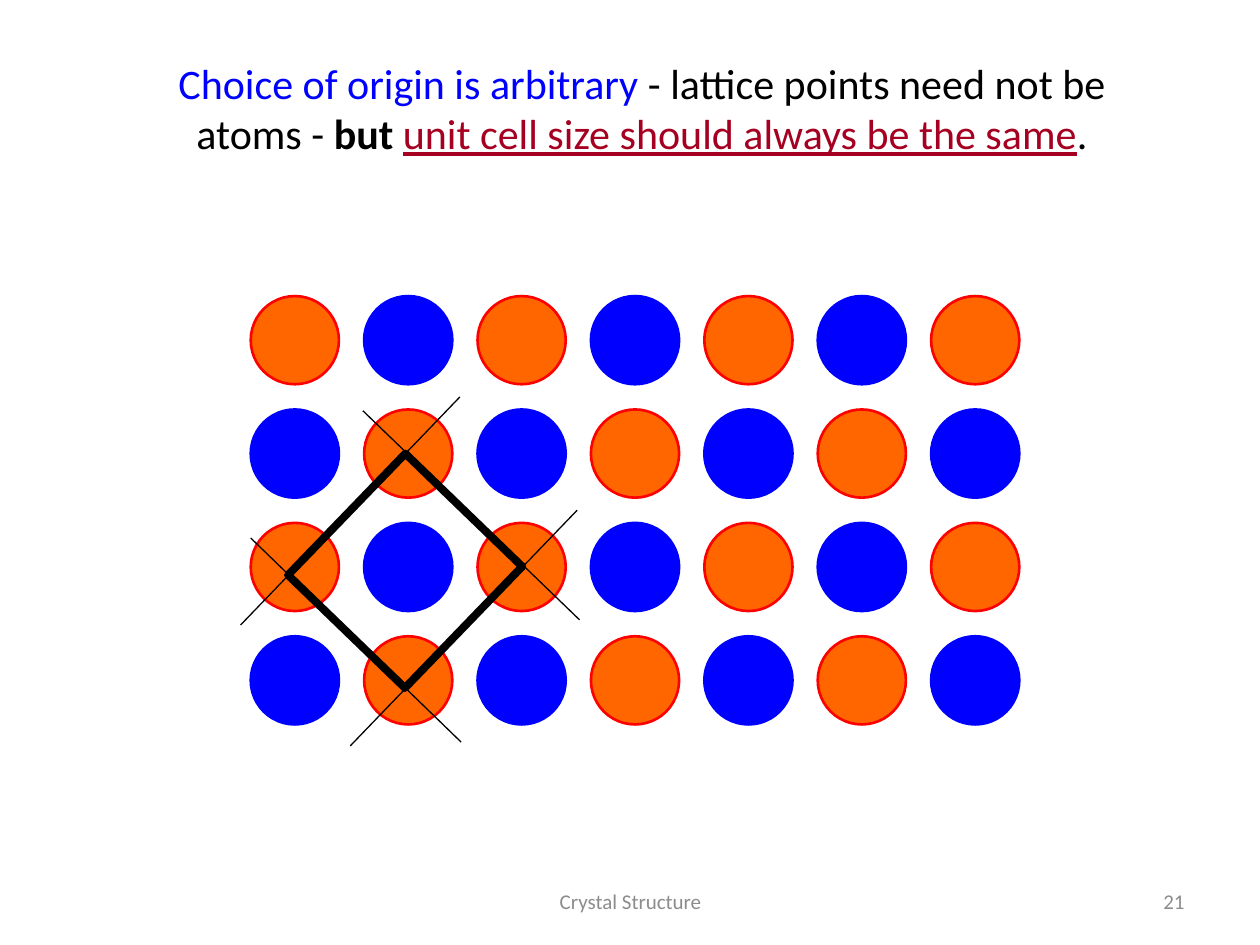
from lxml.etree import SubElement
from pptx import Presentation
from pptx.dml.color import RGBColor
from pptx.enum.shapes import MSO_CONNECTOR, MSO_SHAPE
from pptx.enum.text import MSO_ANCHOR, PP_ALIGN
from pptx.oxml.ns import qn
from pptx.util import Inches, Pt

"""Build a slide on choosing the unit cell origin in a two-atom lattice."""

TITLE = [
    ("Choice of origin is arbitrary", "0000FF", False, False),
    (" - lattice points need not be atoms - ", "000000", False, False),
    ("but ", "000000", True, False),
    ("unit cell size should always be the same", "A50021", False, True),
    (".", "000000", False, False),
]
FOOTERS = [
    ("Crystal Structure", (3.42, 6.95, 3.17, 0.4), PP_ALIGN.CENTER),
    ("21", (7.17, 6.95, 2.33, 0.4), PP_ALIGN.RIGHT),
]
ATOMS = [("FF6600", "FF0000"), ("0000FF", "0000FF")]
ROWS, COLS = 4, 7
LEFT, TOP, PITCH, SIZE = 1.99, 2.35, 0.9, 0.7
LATTICE_LINES = [
    (3.65, 3.15, 1.91, 4.96),
    (4.58, 4.05, 2.78, 5.92),
    (2.88, 3.26, 4.6, 4.92),
    (1.99, 4.27, 3.66, 5.89),
]
UNIT_CELL, CELL_ANGLE = (2.57, 3.86, 1.29, 1.34), 44


def rgb(color):
    return RGBColor.from_string(color)


def add_text(slide, box, runs, size, align):
    tf = slide.shapes.add_textbox(*map(Inches, box)).text_frame
    tf.word_wrap = True
    tf.vertical_anchor = MSO_ANCHOR.MIDDLE
    p = tf.paragraphs[0]
    p.alignment = align
    p.font.name, p.font.size = "Calibri", Pt(size)
    for text, color, bold, underline in runs:
        r = p.add_run()
        r.text = text
        r.font.color.rgb = rgb(color)
        r.font.bold, r.font.underline = bold, underline


def add_outlined(slide, kind, box, fill, line, width):
    sp = slide.shapes.add_shape(kind, *map(Inches, box))
    sp.shadow.inherit = False
    if fill:
        sp.fill.solid()
        sp.fill.fore_color.rgb = rgb(fill)
    else:
        sp.fill.background()
    sp.line.color.rgb = rgb(line)
    sp.line.width = Pt(width)
    return sp


def add_line(slide, ends):
    line = slide.shapes.add_connector(MSO_CONNECTOR.STRAIGHT, *map(Inches, ends))
    line.line.color.rgb = rgb("000000")
    line.line.width = Pt(0.75)
    SubElement(line._element.spPr, qn("a:effectLst"))


def main():
    prs = Presentation()
    prs.slide_width, prs.slide_height = Inches(10), Inches(7.5)
    s = prs.slides.add_slide(prs.slide_layouts[6])

    for text, box, align in FOOTERS:
        add_text(s, box, [(text, "8C8C8C", False, False)], 12, align)
    add_text(s, (0.98, 0.08, 8.23, 1.55), TITLE, 24, PP_ALIGN.CENTER)

    for row in range(ROWS):
        for col in range(COLS):
            fill, line = ATOMS[(row + col) % 2]
            box = (LEFT + col * PITCH, TOP + row * PITCH, SIZE, SIZE)
            add_outlined(s, MSO_SHAPE.OVAL, box, fill, line, 1.5)

    for ends in LATTICE_LINES:
        add_line(s, ends)
    cell = add_outlined(s, MSO_SHAPE.RECTANGLE, UNIT_CELL, None, "000000", 4.5)
    cell.rotation = CELL_ANGLE

    prs.save("out.pptx")


if __name__ == "__main__":
    main()
